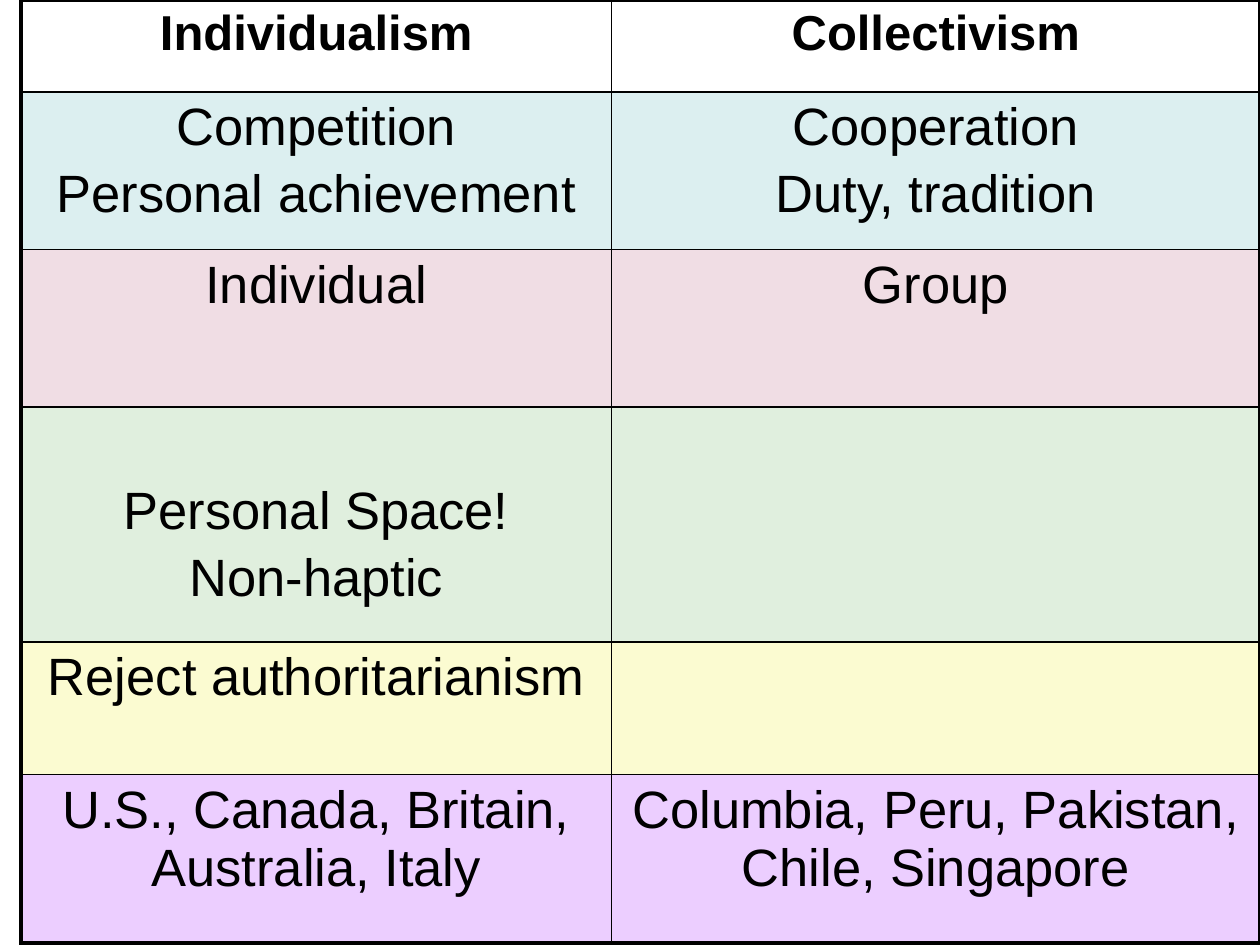
from dataclasses import dataclass

from lxml import etree
from pptx import Presentation
from pptx.dml.color import RGBColor
from pptx.enum.text import PP_ALIGN
from pptx.oxml.ns import qn
from pptx.util import Pt

CENTER = PP_ALIGN.CENTER
FONT = "Arial"
COLORS = {
    "black": "000000",
    "white": "FFFFFF",
    "blue": "BBE0E3",
    "pink": "E2BCCA",
    "green": "C3E0BE",
    "yellow": "F9F9A5",
    "purple": "DA9FFF",
}
COL_WIDTHS = (337.5, 370.5)
INNER, OUTER = 1, 2.25  # border widths
INSET_X, INSET_Y = 7.2, 3.6


@dataclass(frozen=True)
class Row:
    height: float
    color: str
    individualism: tuple[str, ...]
    collectivism: tuple[str, ...] = ()
    size: float = 30
    bold: bool = False
    alpha: int = 50
    top: float = INSET_Y


ROWS = (
    Row(52.5, "white", ("Individualism",), ("Collectivism",),
        size=28, bold=True, alpha=100),
    Row(90, "blue", ("Competition", "Personal achievement"),
        ("Cooperation", "Duty, tradition")),
    Row(90, "pink", ("Individual",), ("Group",)),
    Row(134.5, "green", ("Personal Space!", "Non-haptic"), top=43),
    Row(75.5, "yellow", ("Reject authoritarianism",)),
    Row(96.5, "purple", ("U.S., Canada, Britain, Australia, Italy",),
        ("Columbia, Peru, Pakistan, Chile, Singapore",)),
)


def write_lines(tf, lines: tuple[str, ...], *, size: float, bold: bool,
                color: str = "black", gap: float = 5) -> None:
    for i, line in enumerate(lines):
        p = tf.add_paragraph() if i else tf.paragraphs[0]
        p.alignment = CENTER
        p.space_before = Pt(gap)
        r = p.add_run()
        r.text = line
        r.font.name = FONT
        r.font.size = Pt(size)
        r.font.bold = bold
        r.font.color.rgb = RGBColor.from_string(COLORS[color])


def fill_cell(cell, color: str, alpha: int) -> None:
    cell.fill.solid()
    cell.fill.fore_color.rgb = RGBColor.from_string(COLORS[color])
    if alpha < 100:
        clr = cell._tc.tcPr.find(f".//{qn('a:srgbClr')}")
        etree.SubElement(clr, qn("a:alpha"), val=str(alpha * 1000))


def set_borders(cell, widths: dict[str, float]) -> None:
    """Put the lines, in L, R, T, B order, ahead of the cell's fill."""
    tc_pr = cell._tc.get_or_add_tcPr()
    for i, (side, width) in enumerate(widths.items()):
        ln = etree.Element(qn(f"a:ln{side}"), w=str(Pt(width)))
        fill = etree.SubElement(ln, qn("a:solidFill"))
        etree.SubElement(fill, qn("a:srgbClr"), val=COLORS["black"])
        tc_pr.insert(i, ln)


def draw_table(s, rows: tuple[Row, ...], left: float, top: float) -> None:
    frame = s.shapes.add_table(
        len(rows), len(COL_WIDTHS), Pt(left), Pt(top),
        Pt(sum(COL_WIDTHS)), Pt(sum(row.height for row in rows)))
    table = frame.table
    table.first_row = table.horz_banding = False
    for col, width in zip(table.columns, COL_WIDTHS):
        col.width = Pt(width)

    last_row, last_col = len(rows) - 1, len(COL_WIDTHS) - 1
    for i, row in enumerate(rows):
        table.rows[i].height = Pt(row.height)
        for j, lines in enumerate((row.individualism, row.collectivism)):
            cell = table.cell(i, j)
            cell.margin_left = cell.margin_right = Pt(INSET_X)
            cell.margin_top, cell.margin_bottom = Pt(row.top), Pt(INSET_Y)
            write_lines(cell.text_frame, lines, size=row.size, bold=row.bold)
            fill_cell(cell, row.color, row.alpha)
            set_borders(cell, {
                "L": OUTER if j == 0 else INNER,
                "R": OUTER if j == last_col else INNER,
                "T": OUTER if i == 0 else INNER,
                "B": OUTER if i == last_row else INNER,
            })


def main() -> None:
    prs = Presentation()
    prs.slide_width, prs.slide_height = Pt(720), Pt(540)
    s = prs.slides.add_slide(prs.slide_layouts[6])
    draw_table(s, ROWS, left=12, top=0)
    prs.save("out.pptx")


if __name__ == "__main__":
    main()
